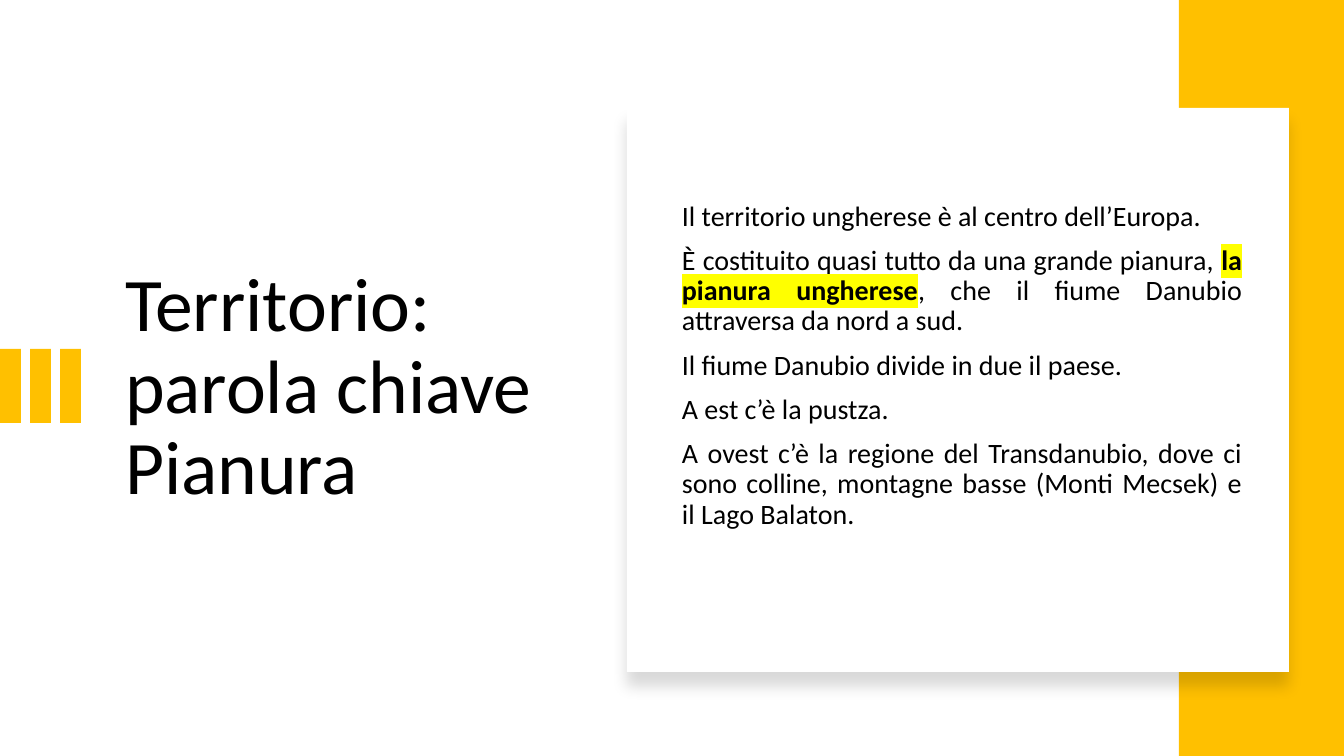
from lxml.etree import SubElement as Sub
from pptx import Presentation
from pptx.dml.color import RGBColor as RGB
from pptx.enum.shapes import MSO_SHAPE as Kind
from pptx.enum.text import MSO_ANCHOR as Anchor, MSO_AUTO_SIZE as Fit, PP_ALIGN as Align
from pptx.oxml.ns import qn
from pptx.util import Emu, Pt

WIDE, HIGH = 1344, 756
GOLD, WHITE, BLACK, MARK = "FFC000", "FFFFFF", "000000", "FFFF00"

BODY = [
    (["Il territorio ungherese è al centro dell’Europa."], Align.LEFT),
    (["È costituito quasi tutto da una grande pianura, ",
      ("la pianura ungherese", MARK),
      ", che il fiume Danubio attraversa da nord a sud."], Align.JUSTIFY),
    (["Il fiume Danubio divide in due il paese."], Align.LEFT),
    (["A est c’è la pustza."], Align.LEFT),
    (["A ovest c’è la regione del Transdanubio, dove ci sono colline, "
      "montagne basse (Monti Mecsek) e il Lago Balaton."], Align.JUSTIFY),
]


def px(n):
    return Emu(round(n * 12192000 / WIDE))


def hue(code):
    return RGB.from_string(code)


def write(para, text, size=20, color=BLACK, face="Calibri", mark=None):
    run = para.add_run()
    run.text = text
    font = run.font
    font.size, font.name, font.bold = Pt(size), face, bool(mark)
    font.color.rgb = hue(color)
    if mark:
        props = run._r.get_or_add_rPr()
        light = Sub(props, qn("a:highlight"))
        Sub(light, qn("a:srgbClr"), val=mark)
        props.find(qn("a:solidFill")).addnext(light)


class Deck:
    def __init__(self):
        self.file = Presentation()
        self.file.slide_width, self.file.slide_height = px(WIDE), px(HIGH)
        self.page = self.file.slides.add_slide(self.file.slide_layouts[5])

    def frame(self, shape):
        frame = shape.text_frame
        frame.word_wrap = True
        frame.auto_size = Fit.NONE
        frame.vertical_anchor = Anchor.MIDDLE
        return frame

    def title(self, text, x, y, w, h):
        shape = self.page.shapes.title
        shape.left, shape.top, shape.width, shape.height = map(px, (x, y, w, h))
        para = self.frame(shape).paragraphs[0]
        para.alignment, para.line_spacing = Align.LEFT, 0.9
        write(para, text, size=54)

    def rect(self, x, y, w, h, color):
        shape = self.page.shapes.add_shape(Kind.RECTANGLE, *map(px, (x, y, w, h)))
        shape.shadow.inherit = False
        shape.fill.solid()
        shape.fill.fore_color.rgb = hue(color)
        shape.line.fill.background()
        return shape

    def card(self, x, y, w, h):
        shape = self.rect(x, y, w, h, WHITE)
        glow = shape._element.spPr.find(qn("a:effectLst"))
        shade = Sub(glow, qn("a:outerShdw"), blurRad=str(Pt(11)), dist=str(Pt(10)),
                    dir="5400000", algn="t", rotWithShape="0")
        tint = Sub(shade, qn("a:srgbClr"), val=BLACK)
        Sub(tint, qn("a:alpha"), val="15000")

    def body(self, items, x, y, w, h):
        frame = self.frame(self.page.shapes.add_textbox(*map(px, (x, y, w, h))))
        for i, (parts, align) in enumerate(items):
            para = frame.add_paragraph() if i else frame.paragraphs[0]
            para.alignment, para.line_spacing = align, 0.9
            para.space_before = Pt(10)
            for part in parts:
                text, mark = (part, None) if isinstance(part, str) else part
                write(para, text, mark=mark)


def main():
    deck = Deck()
    deck.title("Territorio: parola chiave Pianura", 115, 147, 429, 483)
    for i in range(3):
        deck.rect(30 * i, 349, 21, 74, GOLD)
    deck.rect(1179, 0, 165, HIGH, GOLD)
    deck.card(627, 108, 662, 564)
    deck.body(BODY, 672, 147, 580, 438)
    deck.file.save("out.pptx")


if __name__ == "__main__":
    main()
